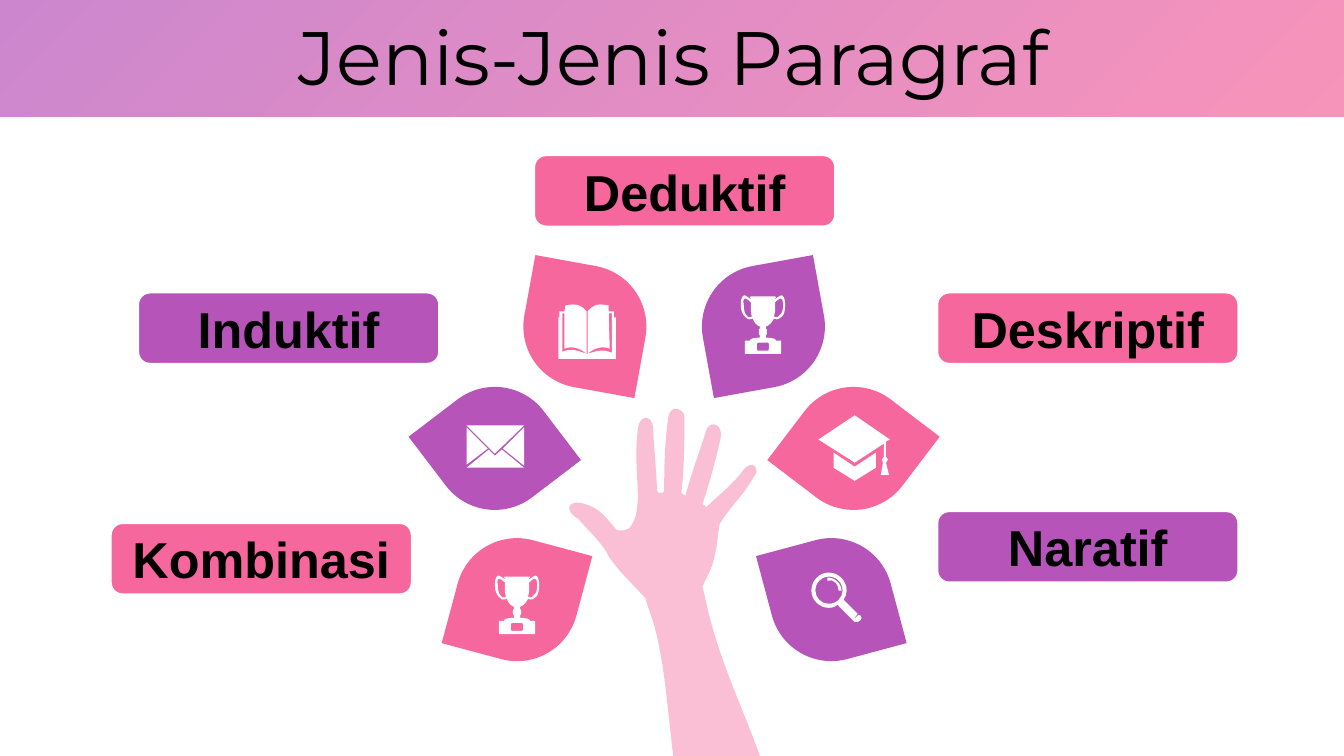
from dataclasses import dataclass

from lxml.etree import SubElement
from pptx import Presentation
from pptx.dml.color import RGBColor
from pptx.enum.shapes import MSO_SHAPE
from pptx.enum.text import MSO_ANCHOR, PP_ALIGN
from pptx.oxml.ns import qn
from pptx.util import Cm, Pt


@dataclass(frozen=True)
class Theme:
    pink: RGBColor = RGBColor(0xF5, 0x67, 0x9D)
    purple: RGBColor = RGBColor(0xB7, 0x54, 0xBA)
    skin: RGBColor = RGBColor(0xF9, 0xA4, 0xC4)
    white: RGBColor = RGBColor(0xFF, 0xFF, 0xFF)
    black: RGBColor = RGBColor(0, 0, 0)
    title_font: str = "Montserrat"
    label_font: str = "Arial"
    title_size: Pt = Pt(54)
    label_size: Pt = Pt(36)
    outline: Pt = Pt(1.5)
    opacity: int = 70


THEME = Theme()
SLIDE_WIDTH, SLIDE_HEIGHT = 33.87, 19.05
BANNER_HEIGHT = 2.95
LABEL_WIDTH, LABEL_HEIGHT = 7.59, 1.8
PETAL_SIZE = 3.1
PETAL_AXIS = 16.99
OUTLINE_UNIT = Cm(2.54) / 100

LABELS = [
    ("Deduktif", 13.46, 3.91, THEME.pink),
    ("Induktif", 3.48, 7.37, THEME.purple),
    ("Kombinasi", 2.79, 13.18, THEME.pink),
    ("Deskriptif", 23.62, 7.37, THEME.pink),
    ("Naratif", 23.62, 12.88, THEME.purple),
]

PETAL_PAIRS = [
    (2.25, 8.23, -10.3, THEME.pink, THEME.purple),
    (4.52, 11.3, 37.3, THEME.purple, THEME.pink),
    (3.96, 15.11, 75, THEME.pink, THEME.purple),
]

HAND = """M 668 750 L 754 750 C 736 700 717 663 703 608 L 697 582
C 702 570 706 566 709 552 712 540 711 538 714 520 724 503 738 491 748 473
755 466 747 454 737 467 727 481 713 491 701 503 L 697 500
C 704 479 710 457 715 435 718 422 706 416 701 426 694 449 687 466 680 492
L 676 489 C 679 465 679 438 679 413 679 407 666 399 663 414
660 439 659 455 659 487 659 489 653 491 652 487 651 465 649 445 648 425
647 410 634 412 633 425 630 449 632 467 633 491 633 499 632 505 631 511
626 527 621 527 612 526 602 515 596 503 576 499 563 497 560 507 574 515
584 527 598 539 604 552 613 566 631 583 640 593 L 649 620
C 660 661 662 702 668 750"""

TROPHY = """M 17 47 L 16 48 16 54 17 55 27 55 28 54 28 48 27 47
M 40 3 C 39 3 37 4 34 7 L 34 16 33 21 C 36 23 38 21 39 19
41 18 42 14 42 10 42 5 41 3 40 3
M 4 3 C 3 3 2 5 3 10 3 14 4 18 5 19 6 21 8 23 11 21 L 10 16 10 7
C 7 4 5 3 4 3
M 4 0 C 6 0 8 3 10 4 L 10 3 9 2 10 1 34 1 35 2 34 3 34 4
C 36 3 38 0 40 0 42 0 44 2 44 10 44 15 43 19 41 21 39 23 36 25 33 23
31 27 28 30 25 31 L 25 33 26 34 26 38 25 40 25 42
C 31 42 35 43 35 45 L 40 45 40 58 4 58 4 45 9 45
C 9 43 13 42 19 42 L 19 40 18 38 18 34 19 33 19 31
C 16 30 13 27 12 23 8 25 5 23 4 21 2 19 0 15 0 10 0 2 2 0 4 0"""

BOOK = """M 582 351 L 583 351 C 593 348 597 346 607 350 L 607 311 604 311 605 346
C 598 343 590 345 583 351 L 583 309 C 587 304 591 302 596 302 L 604 303 604 309
609 309 609 315 611 315 611 356 554 356 554 315 555 315 555 309 560 309 561 303
568 302 C 574 302 578 304 582 309 L 582 351
C 575 345 567 343 560 346 L 560 311 558 311 558 349 C 567 345 573 348 582 351"""

ENVELOPE = """M 498 446 L 520 464 463 464 485 446 491 452
M 520 424 L 520 462 499 445
M 463 424 L 484 445 463 461
M 463 422 L 520 422 491 450"""

MAGNIFIER = """M 852 610 L 854 611 C 855 612 855 614 854 615 L 851 617 848 617 846 615
M 821 573 C 824 573 828 574 831 577 833 579 835 583 835 586 L 832 586
C 832 583 831 580 829 578 827 576 824 575 821 576
M 822 572 C 815 572 809 578 809 586 809 593 815 599 822 599
830 599 836 593 836 586 836 578 830 572 822 572
M 822 568 C 832 568 840 576 840 586 840 589 839 592 837 595
L 851 609 846 615 831 600 C 829 602 826 603 822 603
813 603 805 595 805 586 805 576 813 568 822 568"""

GRADUATION_CAP = """M 827 449 L 848 463 869 449 869 464 848 477 827 464
M 848 412 L 883 436 879 438 879 453 881 456 879 459 882 471 874 471 876 459
875 456 877 453 877 440 848 459 812 436"""

ICONS = [
    (TROPHY, 735, 293),
    (TROPHY, 491, 571),
    (BOOK, 0, 0),
    (ENVELOPE, 0, 0),
    (MAGNIFIER, 0, 0),
    (GRADUATION_CAP, 0, 0),
]


def set_opacity(properties):
    for color in list(properties.iter(qn("a:srgbClr"))):
        SubElement(color, qn("a:alpha"), val=str(THEME.opacity * 1000))


def paint(shape, color):
    shape.shadow.inherit = False
    shape.fill.solid()
    shape.fill.fore_color.rgb = color
    shape.line.fill.background()


def write(shape, text, font_name, size, bold=False):
    frame = shape.text_frame
    frame.word_wrap = True
    frame.vertical_anchor = MSO_ANCHOR.MIDDLE
    paragraph = frame.paragraphs[0]
    paragraph.text = text
    paragraph.alignment = PP_ALIGN.CENTER
    font = paragraph.font
    font.name, font.size, font.bold = font_name, size, bold
    font.color.rgb = THEME.black
    return paragraph


def add_banner(slide, title):
    banner = slide.shapes.add_shape(
        MSO_SHAPE.RECTANGLE, 0, 0, Cm(SLIDE_WIDTH), Cm(BANNER_HEIGHT))
    banner.shadow.inherit = False
    banner.line.fill.background()
    banner.fill.gradient()
    banner.fill.gradient_angle = 135
    for stop, color in zip(banner.fill.gradient_stops, (THEME.pink, THEME.purple)):
        stop.color.rgb = color
    set_opacity(banner.element.spPr)
    box = slide.shapes.add_textbox(Cm(0.89), Cm(0.53), Cm(32.16), Cm(2))
    write(box, title, THEME.title_font, THEME.title_size).line_spacing = 0.9


def add_label(slide, text, left, top, color):
    label = slide.shapes.add_shape(
        MSO_SHAPE.ROUNDED_RECTANGLE, Cm(left), Cm(top), Cm(LABEL_WIDTH), Cm(LABEL_HEIGHT))
    paint(label, color)
    label.line.color.rgb = THEME.white
    label.line.width = THEME.outline
    write(label, text, THEME.label_font, THEME.label_size, bold=True)


def add_petal(slide, center_x, center_y, rotation, color, corners):
    half = PETAL_SIZE / 2
    petal = slide.shapes.add_shape(
        MSO_SHAPE.ROUND_2_DIAG_RECTANGLE, Cm(center_x - half), Cm(center_y - half),
        Cm(PETAL_SIZE), Cm(PETAL_SIZE))
    petal.adjustments[0], petal.adjustments[1] = corners
    petal.rotation = rotation
    paint(petal, color)


def contour_segments(contour, left, top):
    segments, command, pending = [], "L", []
    tokens = iter(contour.split())
    for token in tokens:
        if token in ("L", "C"):
            command = token
            continue
        pending.append((round((int(token) + left) * OUTLINE_UNIT),
                        round((int(next(tokens)) + top) * OUTLINE_UNIT)))
        if command == "L" or len(pending) == 3:
            segments.append(pending)
            pending = []
    return segments


def bend_segments(shape, segments):
    lines = list(shape.element.spPr.iter(qn("a:lnTo")))
    for line, (*controls, _) in zip(lines, segments):
        if not controls:
            continue
        line.tag = qn("a:cubicBezTo")
        for index, (x, y) in enumerate(controls):
            control = SubElement(line, qn("a:pt"), x=str(x - shape.left), y=str(y - shape.top))
            line.insert(index, control)


def add_outline(slide, outline, color, left=0, top=0):
    builder, drawn = None, []
    for contour in outline.split("M")[1:]:
        (start,), *segments = contour_segments(contour, left, top)
        if builder is None:
            builder = slide.shapes.build_freeform(*start)
        else:
            builder.move_to(*start)
        builder.add_line_segments([segment[-1] for segment in segments], close=True)
        drawn.extend(segments)
    shape = builder.convert_to_shape()
    bend_segments(shape, drawn)
    paint(shape, color)
    return shape


def main():
    presentation = Presentation()
    presentation.slide_width, presentation.slide_height = Cm(SLIDE_WIDTH), Cm(SLIDE_HEIGHT)
    slide = presentation.slides.add_slide(presentation.slide_layouts[6])
    add_banner(slide, "Jenis-Jenis Paragraf")
    hand = add_outline(slide, HAND, THEME.skin)
    set_opacity(hand.element.spPr)
    for offset, center_y, rotation, left_color, right_color in PETAL_PAIRS:
        add_petal(slide, PETAL_AXIS + offset, center_y, rotation, right_color, (0.5, 0))
        add_petal(slide, PETAL_AXIS - offset, center_y, -rotation, left_color, (0, 0.5))
    for label in LABELS:
        add_label(slide, *label)
    for outline, left, top in ICONS:
        add_outline(slide, outline, THEME.white, left, top)
    presentation.save("out.pptx")


if __name__ == "__main__":
    main()
